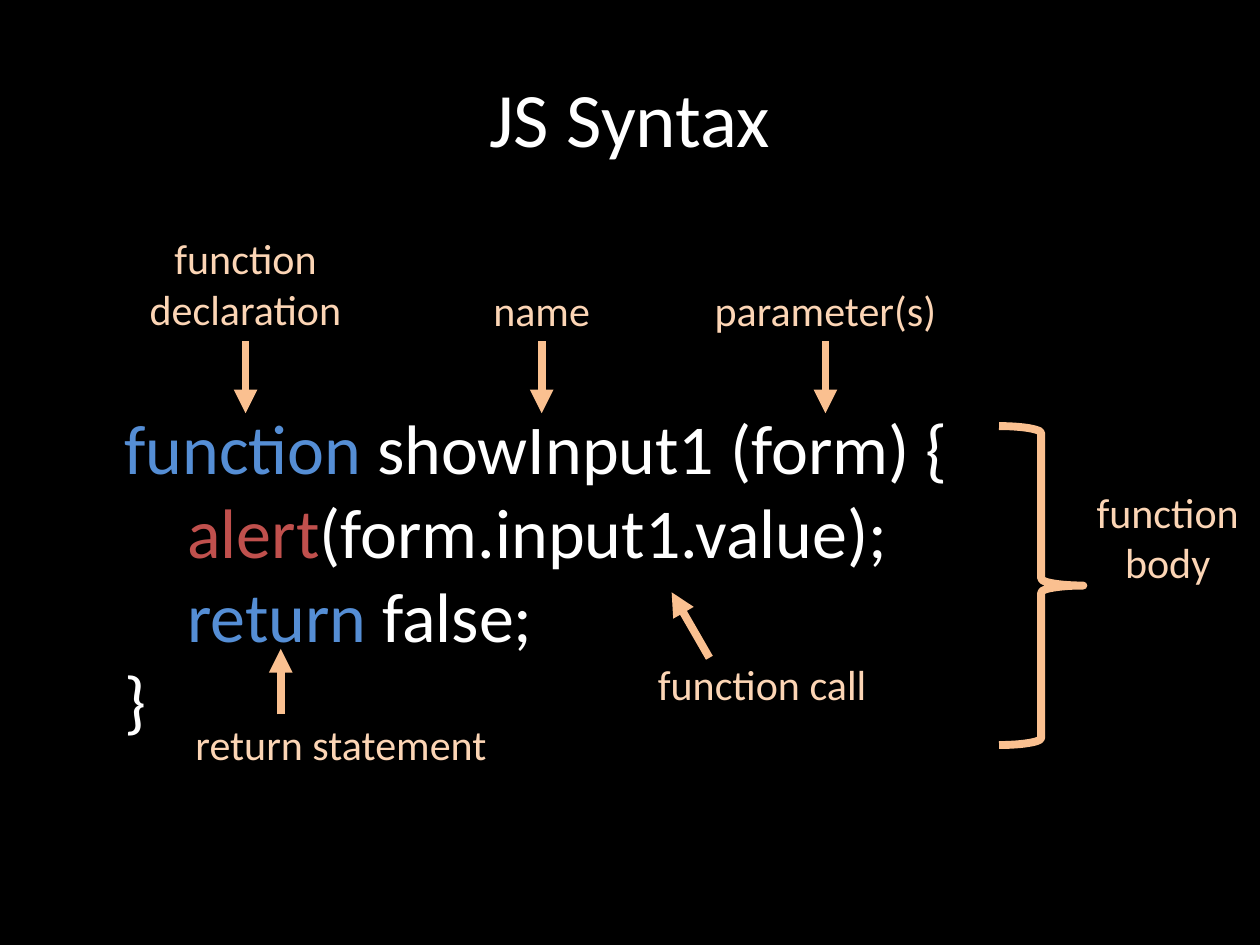
"""Build a slide that labels the parts of a JavaScript function."""
from pptx import Presentation
from pptx import util as u
from pptx.dml.color import RGBColor
from pptx.enum import shapes, text
from pptx.oxml import ns
from lxml import etree

BLACK = RGBColor(0x00, 0x00, 0x00)
WHITE = RGBColor(0xFF, 0xFF, 0xFF)
BLUE = RGBColor(0x55, 0x8E, 0xD5)
RED = RGBColor(0xC0, 0x50, 0x4D)
PEACH = RGBColor(0xFC, 0xD5, 0xB5)
ORANGE = RGBColor(0xFA, 0xC0, 0x90)

TITLE = "JS Syntax"
CODE = [
    [("function ", BLUE), ("showInput1 (form) {", WHITE)],
    [("\talert", RED), ("(form.input1.value);", WHITE)],
    [("\treturn", BLUE), (" false;", WHITE)],
    [("}", WHITE)],
]
HEADS = [
    ("function\vdeclaration", 4.95, 4.42, 2.31),
    ("name", 10.92, 2.49, 1.27),
    ("parameter(s)", 16.64, 5.03, 1.27),
]
NOTES = [
    ("function\nbody", (21.84, 9.68, 3.4, 2.31), False),
    ("return statement", (3.56, 14.35, 6.63, 1.27), False),
    ("function call", (12.75, 13.16, 5.23, 1.27), True),
]
LINKS = [(5.66, 14.4, 5.66, 13.08), (14.3, 13.26, 13.54, 11.94)]
BRACE = (20.14, 8.59, 1.7, 6.43)
BASE, TIP = 6.88, 8.33


def cms(vals):
    return [u.Cm(val) for val in vals]


def put(obj, **vals):
    for key, val in vals.items():
        setattr(obj, key, val)


def style(run, size, tint):
    put(run.font, name="Calibri", size=u.Pt(size))
    run.font.color.rgb = tint


def add_box(slide, spot, wrap):
    box = slide.shapes.add_textbox(*cms(spot))
    put(box.text_frame, word_wrap=wrap,
        auto_size=text.MSO_AUTO_SIZE.SHAPE_TO_FIT_TEXT)
    return box


def add_label(slide, words, spot, wrap=False):
    box = add_box(slide, spot, wrap)
    box.text_frame.text = words
    for para in box.text_frame.paragraphs:
        para.alignment = text.PP_ALIGN.CENTER
        for run in para.runs:
            style(run, 24, PEACH)
    return box


def add_code(slide):
    frame = add_box(slide, (2.26, 8.03, 19.28, 7.09), True).text_frame
    for row, parts in enumerate(CODE):
        para = frame.add_paragraph() if row else frame.paragraphs[0]
        for words, tint in parts:
            run = para.add_run()
            run.text = words
            style(run, 40, tint)


def ink(line):
    line.color.rgb = ORANGE
    line.width = u.Pt(4.5)


def add_arrow(slide, ends):
    link = slide.shapes.add_connector(shapes.MSO_CONNECTOR.STRAIGHT, *cms(ends))
    ink(link.line)
    etree.SubElement(link.line._get_or_add_ln(), ns.qn("a:tailEnd"), type="triangle")
    etree.SubElement(link._element.spPr, ns.qn("a:effectLst"))
    return link


def main():
    deck = Presentation()
    put(deck, slide_width=u.Cm(25.4), slide_height=u.Cm(19.05))
    slide = deck.slides.add_slide(deck.slide_layouts[5])
    slide.background.fill.solid()
    slide.background.fill.fore_color.rgb = BLACK

    title = slide.shapes.title
    put(title, **dict(zip(("left", "top", "width", "height"),
                          cms((1.27, 0.76, 22.86, 3.18)))))
    title.text_frame.text = TITLE
    style(title.text_frame.paragraphs[0].runs[0], 44, WHITE)

    add_code(slide)
    for words, mid, wide, high in HEADS:
        label = add_label(slide, words, (mid - wide / 2, BASE - high, wide, high))
        add_arrow(slide, (mid, BASE, mid, TIP)).begin_connect(label, 2)

    brace = slide.shapes.add_shape(shapes.MSO_SHAPE.RIGHT_BRACE, *cms(BRACE))
    brace.shadow.inherit = False
    brace.fill.background()
    ink(brace.line)

    for note in NOTES:
        add_label(slide, *note)
    for ends in LINKS:
        add_arrow(slide, ends)
    deck.save("out.pptx")


if __name__ == "__main__":
    main()
